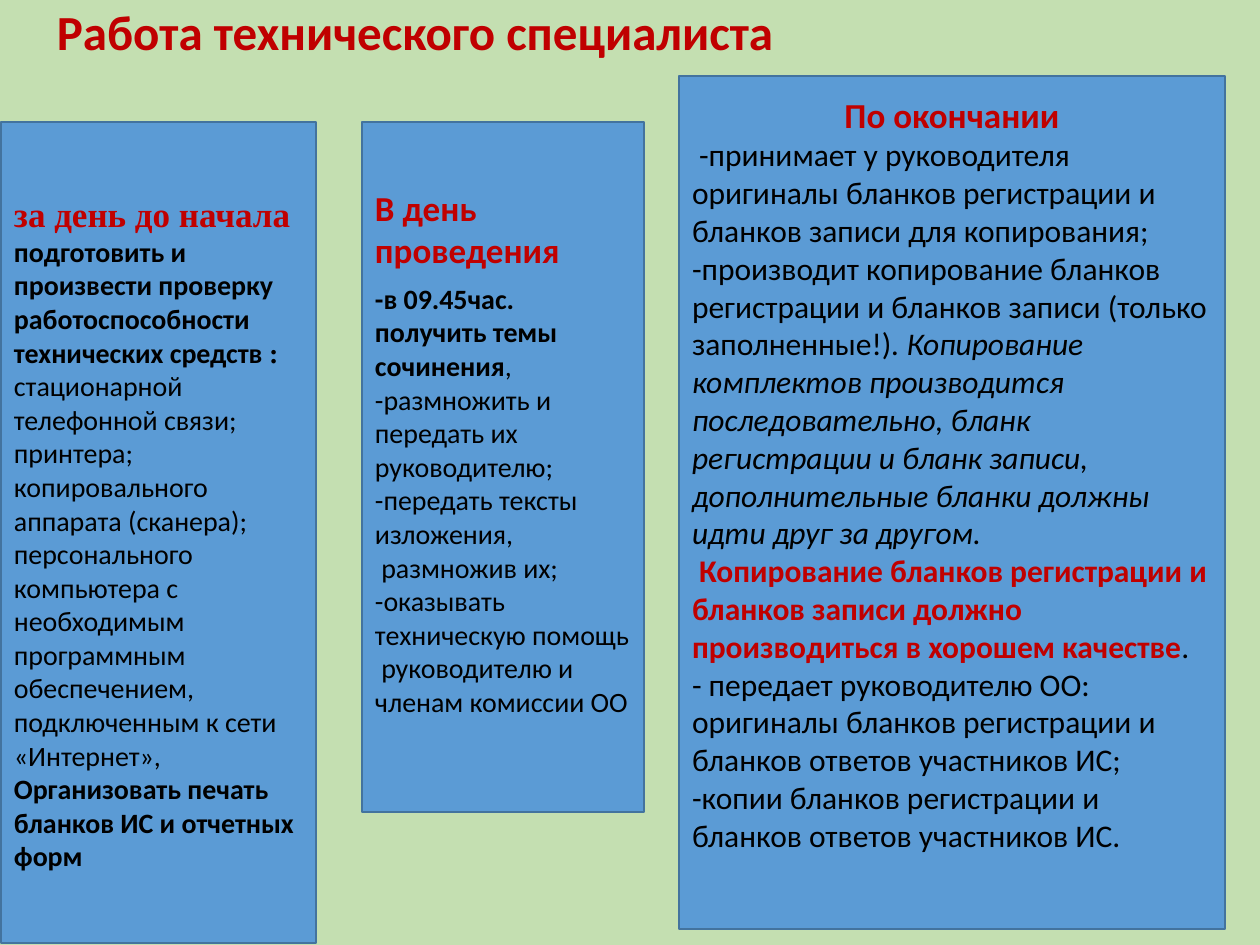
from pptx import Presentation
from pptx.dml.color import RGBColor
from pptx.enum.shapes import MSO_SHAPE
from pptx.enum.text import MSO_ANCHOR, MSO_AUTO_SIZE, PP_ALIGN
from pptx.util import Pt

RECTANGLE = MSO_SHAPE.RECTANGLE
TOP, MIDDLE = MSO_ANCHOR.TOP, MSO_ANCHOR.MIDDLE
LEFT, CENTER = PP_ALIGN.LEFT, PP_ALIGN.CENTER
NO_FIT = MSO_AUTO_SIZE.NONE

PX_PER_INCH = 126
EMU_PER_PX = 914400 / PX_PER_INCH
TITLE_ONLY = 5

COLORS = {
    "background": "C4DFB1",
    "panel": "5B9BD5",
    "border": "43739E",
    "accent": "C00000",
    "text": "000000",
}
BODY = {"name": "Calibri", "bold": False, "italic": False, "color": "text"}
BOLD = {**BODY, "bold": True}
ITALIC = {**BODY, "italic": True}
ACCENT = {**BOLD, "color": "accent"}
TITLE = {**ACCENT, "size": 28}
HEADING = {**ACCENT, "size": 20}
SERIF_HEADING = {**HEADING, "name": "Times New Roman"}
SERIF_BOLD = {**BOLD, "name": "Times New Roman"}

BEFORE_EXAM = [
    [("за день до начала", SERIF_HEADING)],
    [("подготовить и произвести проверку работоспособности технических средств ", BOLD),
     (":", SERIF_BOLD)],
    [("стационарной телефонной связи;", BODY)],
    [("принтера;", BODY)],
    [("копировального аппарата (сканера);", BODY)],
    [("персонального компьютера с необходимым программным обеспечением, "
      "подключенным к сети «Интернет»,", BODY)],
    [("Организовать печать бланков ИС и отчетных форм", BOLD)],
]
EXAM_DAY = [
    [("В день проведения", HEADING)],
    [("-в 09.45час.", BOLD)],
    [("получить темы сочинения", BOLD), (",", BODY)],
    [("-размножить и передать их руководителю;", BODY)],
    [("-передать тексты изложения,", BODY)],
    [(" размножив их;", BODY)],
    [("-оказывать техническую помощь", BODY)],
    [(" руководителю и членам комиссии ОО", BODY)],
]
AFTER_EXAM = [
    [("По окончании", HEADING)],
    [(" -принимает у руководителя оригиналы бланков регистрации и бланков записи "
      "для копирования;", BODY)],
    [("-производит копирование бланков регистрации и бланков записи "
      "(только заполненные!)", BODY),
     (". Копирование комплектов производится последовательно, бланк регистрации "
      "и бланк записи, дополнительные бланки должны идти друг за другом.", ITALIC)],
    [(" ", ITALIC),
     ("Копирование бланков регистрации и бланков записи должно производиться "
      "в хорошем качестве", ACCENT),
     (".", BODY)],
    [("- передает руководителю ОО:", BODY)],
    [("оригиналы бланков регистрации и бланков ответов участников ИС;", BODY)],
    [("-копии бланков регистрации и бланков ответов участников ИС.", BODY)],
]

PANELS = [
    {"box": (1, 122, 315, 821), "paragraphs": BEFORE_EXAM, "size": 16},
    {"box": (362, 122, 282, 690), "paragraphs": EXAM_DAY, "size": 16,
     "heading_gap": 6, "bottom": 35},
    {"box": (679, 76, 546, 853), "paragraphs": AFTER_EXAM, "size": 18,
     "heading_align": CENTER, "bottom": 64},
]


def px(length):
    return round(length * EMU_PER_PX)


def rgb(name):
    return RGBColor.from_string(COLORS[name])


def add_span(para, text, style, size):
    span = para.add_run()
    span.text = text
    values = {"size": size, **style}
    span.font.color.rgb = rgb(values.pop("color"))
    values["size"] = Pt(values["size"])
    for key, value in values.items():
        setattr(span.font, key, value)


def format_frame(frame, anchor, bottom=6):
    values = {
        "word_wrap": True, "auto_size": NO_FIT, "vertical_anchor": anchor,
        "margin_left": px(13), "margin_right": px(13),
        "margin_top": px(6), "margin_bottom": px(bottom),
    }
    for key, value in values.items():
        setattr(frame, key, value)


def place_title(page, box, text):
    title = page.shapes.title
    title.left, title.top, title.width, title.height = map(px, box)
    format_frame(title.text_frame, TOP)
    para = title.text_frame.paragraphs[0]
    para.alignment = LEFT
    add_span(para, text, TITLE, 28)


def place_panel(page, box, paragraphs, size, heading_align=LEFT, heading_gap=0, bottom=6):
    panel = page.shapes.add_shape(RECTANGLE, *map(px, box))
    panel.shadow.inherit = False
    panel.fill.solid()
    panel.fill.fore_color.rgb = rgb("panel")
    panel.line.color.rgb = rgb("border")
    panel.line.width = Pt(1)
    frame = panel.text_frame
    format_frame(frame, MIDDLE, bottom)
    for index, spans in enumerate(paragraphs):
        para = frame.add_paragraph() if index else frame.paragraphs[0]
        para.alignment = LEFT if index else heading_align
        para.space_after = Pt(0 if index else heading_gap)
        for text, style in spans:
            add_span(para, text, style, size)


def main():
    deck = Presentation()
    deck.slide_width, deck.slide_height = px(1260), px(945)
    page = deck.slides.add_slide(deck.slide_layouts[TITLE_ONLY])
    page.background.fill.solid()
    page.background.fill.fore_color.rgb = rgb("background")
    place_title(page, (44, -5, 1004, 72), "Работа технического специалиста")
    for panel in PANELS:
        place_panel(page, **panel)
    deck.save("out.pptx")


if __name__ == "__main__":
    main()
